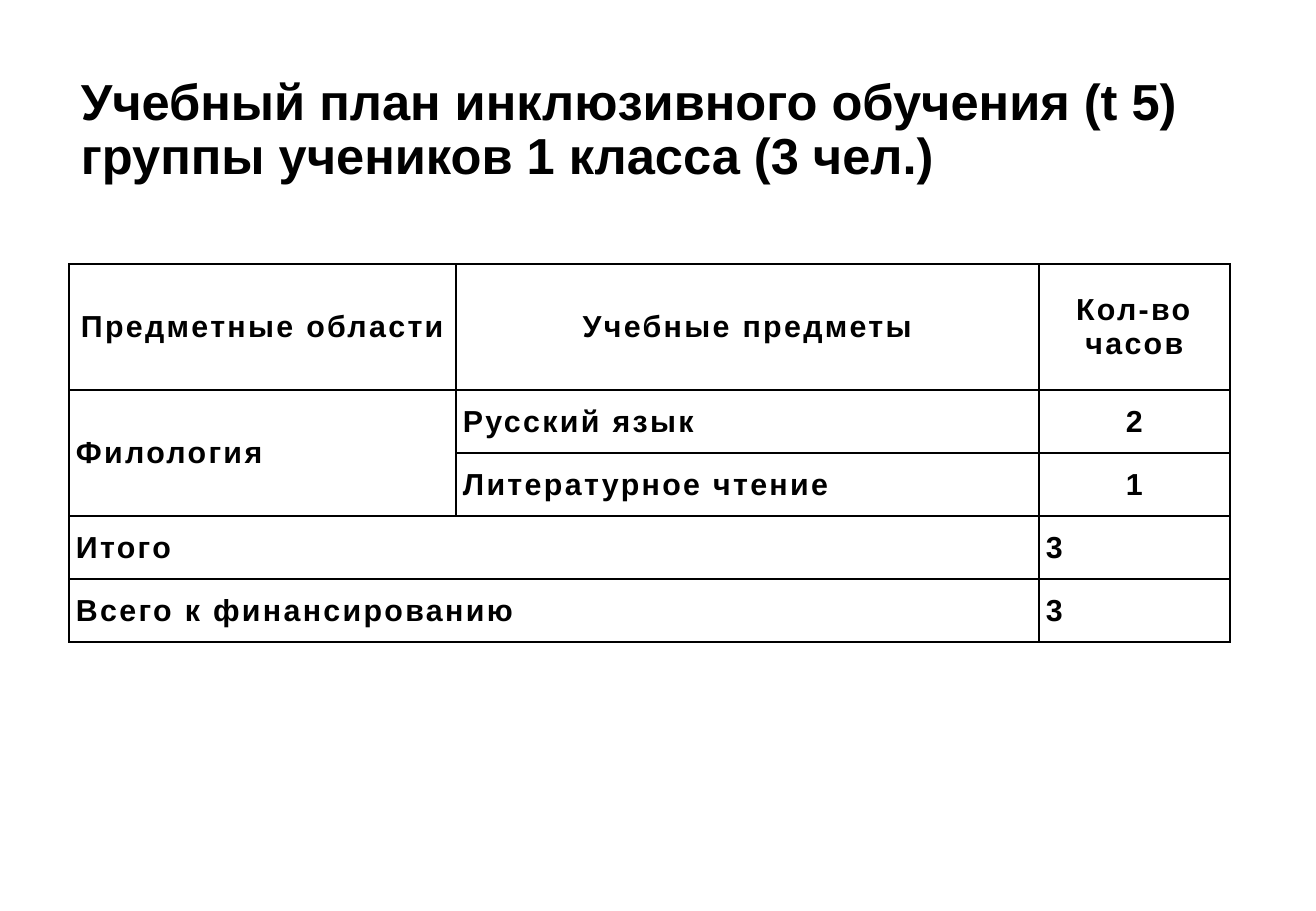
from lxml import etree
from pptx import Presentation
from pptx.dml.color import RGBColor
from pptx.enum import text
from pptx.oxml import ns
from pptx import util as u

PX = 7526  # EMU in one px
COLORS = {"ink": "000000", "paper": "FFFFFF"}
LEFT = 69
CENTER, START = text.PP_ALIGN.CENTER, text.PP_ALIGN.LEFT


def write(frame, content, size, align=START, line_spacing=None, tracking=None):
    """Fill a text frame with one bold paragraph; a newline is a line break."""
    frame.word_wrap = True
    frame.vertical_anchor = text.MSO_ANCHOR.MIDDLE
    para = frame.paragraphs[0]
    para.text = content.replace("\n", "\v")
    para.alignment = align
    para.line_spacing = line_spacing
    for span in para.runs:
        span.font.name = "Arial"
        span.font.size = u.Pt(size)
        span.font.bold = True
        span.font.color.rgb = RGBColor.from_string(COLORS["ink"])
        if tracking:
            span.font._element.set("spc", str(tracking))


def add_borders(cell):
    properties = cell._tc.get_or_add_tcPr()
    for side in ("a:lnL", "a:lnR", "a:lnT", "a:lnB"):
        line = etree.SubElement(properties, ns.qn(side), w=str(u.Pt(1)))
        fill = etree.SubElement(line, ns.qn("a:solidFill"))
        etree.SubElement(fill, ns.qn("a:srgbClr"), val=COLORS["ink"])


deck = Presentation()
deck.slide_width, deck.slide_height = 1316 * PX, 911 * PX
page = deck.slides.add_slide(deck.slide_layouts[6])

title = page.shapes.add_textbox(LEFT * PX, 67 * PX, 1157 * PX, 128 * PX)
write(title.text_frame,
      "Учебный план инклюзивного обучения (t 5)\nгруппы учеников 1 класса (3 чел.)",
      size=30, line_spacing=0.9)

widths = [387, 583, 191]
heights = [126, 63, 63, 63, 63]
rows = [
    ["Предметные области", "Учебные предметы", "Кол-во часов"],
    ["Филология", "Русский язык", "2"],
    ["", "Литературное чтение", "1"],
    ["Итого", "", "3"],
    ["Всего к финансированию", "", "3"],
]
plan = page.shapes.add_table(len(rows), len(widths), LEFT * PX, 264 * PX,
                             sum(widths) * PX, sum(heights) * PX).table
plan.first_row = plan.horz_banding = False
for column, width in zip(plan.columns, widths):
    column.width = width * PX
for row, height in zip(plan.rows, heights):
    row.height = height * PX

for r, labels in enumerate(rows):
    for c, label in enumerate(labels):
        cell = plan.cell(r, c)
        cell.margin_left = cell.margin_right = 7 * PX
        cell.margin_top = cell.margin_bottom = 0
        cell.vertical_anchor = text.MSO_ANCHOR.MIDDLE
        add_borders(cell)
        cell.fill.solid()
        cell.fill.fore_color.rgb = RGBColor.from_string(COLORS["paper"])
        centered = r == 0 or (c == 2 and r < 3)
        if label:
            write(cell.text_frame, label, size=18, tracking=140,
                  align=CENTER if centered else START)

plan.cell(1, 0).merge(plan.cell(2, 0))
for r in (3, 4):
    plan.cell(r, 0).merge(plan.cell(r, 1))

deck.save("out.pptx")
